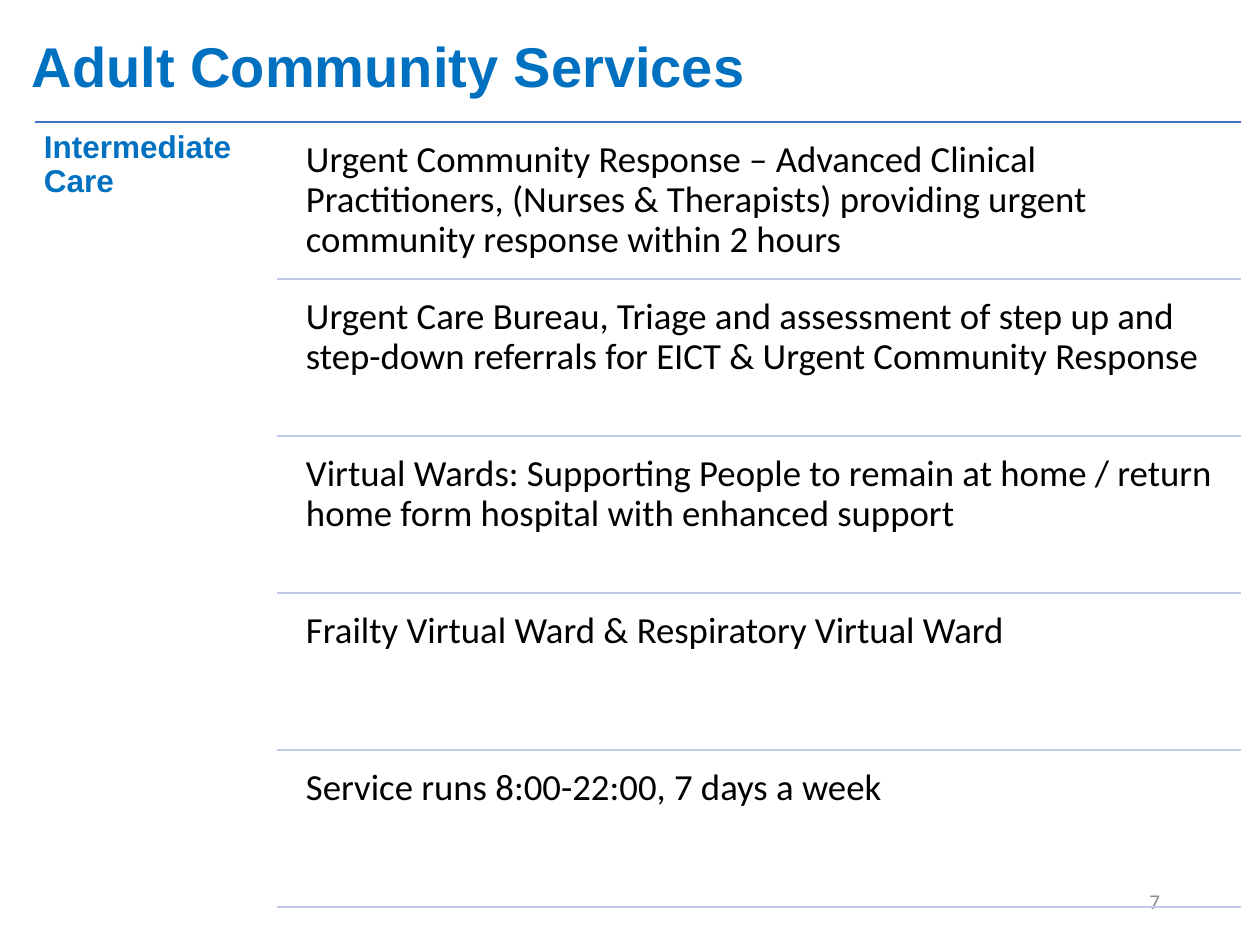
from pptx import Presentation
from pptx.dml.color import RGBColor
from pptx.enum import shapes, text
from pptx.oxml.ns import qn
from pptx.util import Emu, Pt
from lxml import etree

TITLE = "Adult Community Services"
TOPIC = "Intermediate Care"
SERVICES = [
    "Urgent Community Response – Advanced Clinical Practitioners, (Nurses & Therapists) "
    "providing urgent community response within 2 hours",
    "Urgent Care Bureau, Triage and assessment of step up and step-down referrals "
    "for EICT & Urgent Community Response",
    "Virtual Wards: Supporting People to remain at home / return home form hospital "
    "with enhanced support",
    "Frailty Virtual Ward & Respiratory Virtual Ward",
    "Service runs 8:00-22:00, 7 days a week",
]
PAGE_NUMBER = "7"
COLORS = {"heading": "0070C0", "rule": "4472C4", "divider": "C1C9E4",
          "body": "000000", "number": "8C8C8C"}

LEFT, RIGHT, TOP = 35, 1241, 122
DIVIDER_LEFT, SERVICE_LEFT = 277, 295
PITCH, ROW_GAP, ROW_HEIGHT = 157, 8, 150


def px(n):
    return Emu(n * 914400 // 126)


def write(shape, words, size, font, color, insets, bold=False, spacing=0.9,
          anchor=text.MSO_ANCHOR.TOP, align=text.PP_ALIGN.LEFT):
    """Fill a shape with one paragraph; insets are left, top, right, bottom in px."""
    tf = shape.text_frame
    tf.word_wrap = True
    tf.auto_size = text.MSO_AUTO_SIZE.NONE
    tf.vertical_anchor = anchor
    tf.margin_left, tf.margin_top, tf.margin_right, tf.margin_bottom = map(px, insets)
    p = tf.paragraphs[0]
    p.text = words
    p.alignment = align
    p.line_spacing = spacing
    p.space_before = Pt(0)
    p.font.size, p.font.name, p.font.bold = Pt(size), font, bold
    p.font.color.rgb = RGBColor.from_string(COLORS[color])


def add_text(s, box, *args, **kwargs):
    write(s.shapes.add_textbox(*map(px, box)), *args, **kwargs)


def add_rule(s, left, y, color):
    line = s.shapes.add_connector(shapes.MSO_CONNECTOR.STRAIGHT,
                                  px(left), px(y), px(RIGHT), px(y))
    line.line.color.rgb = RGBColor.from_string(COLORS[color])
    line.line.width = Pt(1)
    etree.SubElement(line._element.spPr, qn("a:effectLst"))


def main():
    prs = Presentation()
    prs.slide_width, prs.slide_height = px(1260), px(945)
    s = prs.slides.add_slide(prs.slide_layouts[5])

    title = s.shapes.title
    title.left, title.top, title.width, title.height = map(px, (19, 64, 1118, 68))
    # The deep bottom inset lifts the title clear of the rule.
    write(title, TITLE, 32, "Arial", "heading", (13, 0, 13, 58), bold=True,
          anchor=text.MSO_ANCHOR.MIDDLE)

    add_text(s, (890, 876, 283, 50), PAGE_NUMBER, 12, "Calibri", "number",
             (13, 6, 13, 6), spacing=1.0, anchor=text.MSO_ANCHOR.MIDDLE,
             align=text.PP_ALIGN.RIGHT)

    add_rule(s, LEFT, TOP, "rule")
    add_text(s, (LEFT, TOP, 241, 794), TOPIC, 18, "Arial", "heading",
             (9, 9, 9, 9), bold=True)

    for i, service in enumerate(SERVICES):
        y = TOP + i * PITCH
        add_text(s, (SERVICE_LEFT, y + ROW_GAP, RIGHT - SERVICE_LEFT, ROW_HEIGHT),
                 service, 21, "Calibri", "body", (11, 11, 11, 11))
        add_rule(s, DIVIDER_LEFT, y + PITCH, "divider")

    prs.save("out.pptx")


if __name__ == "__main__":
    main()
